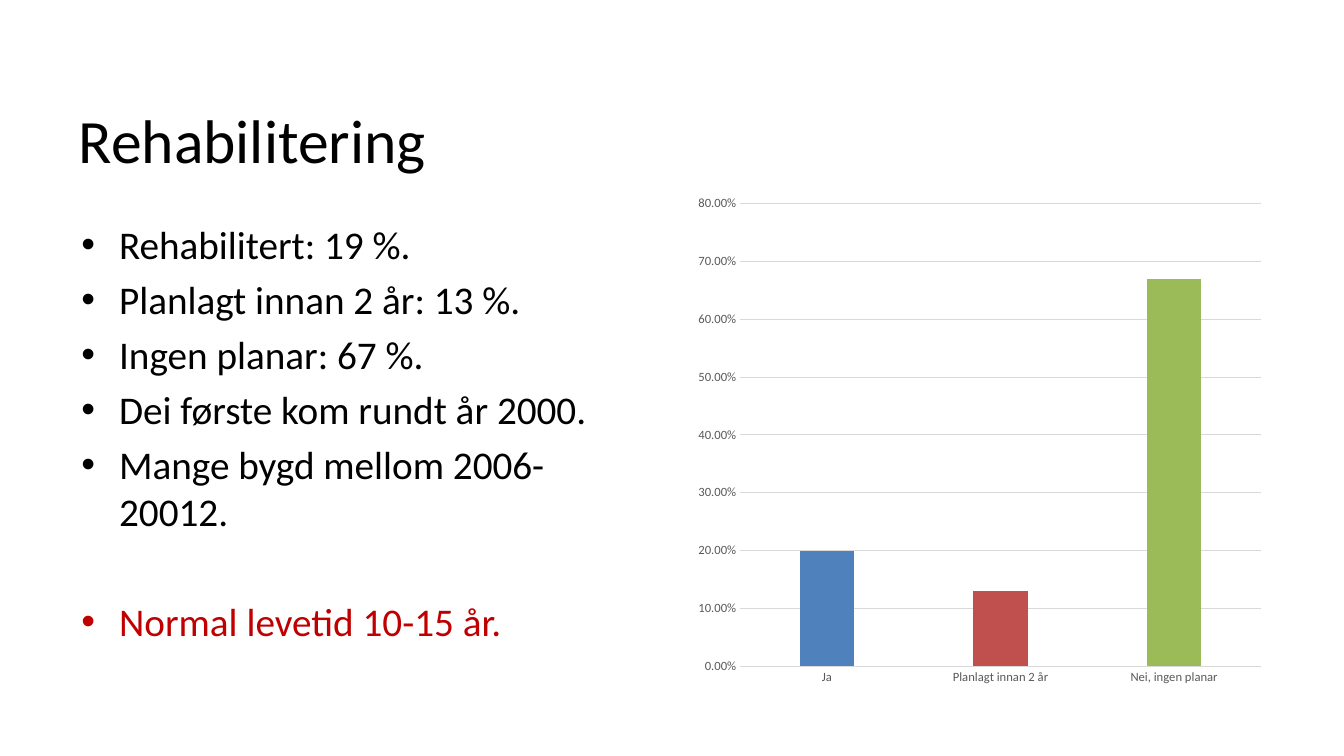
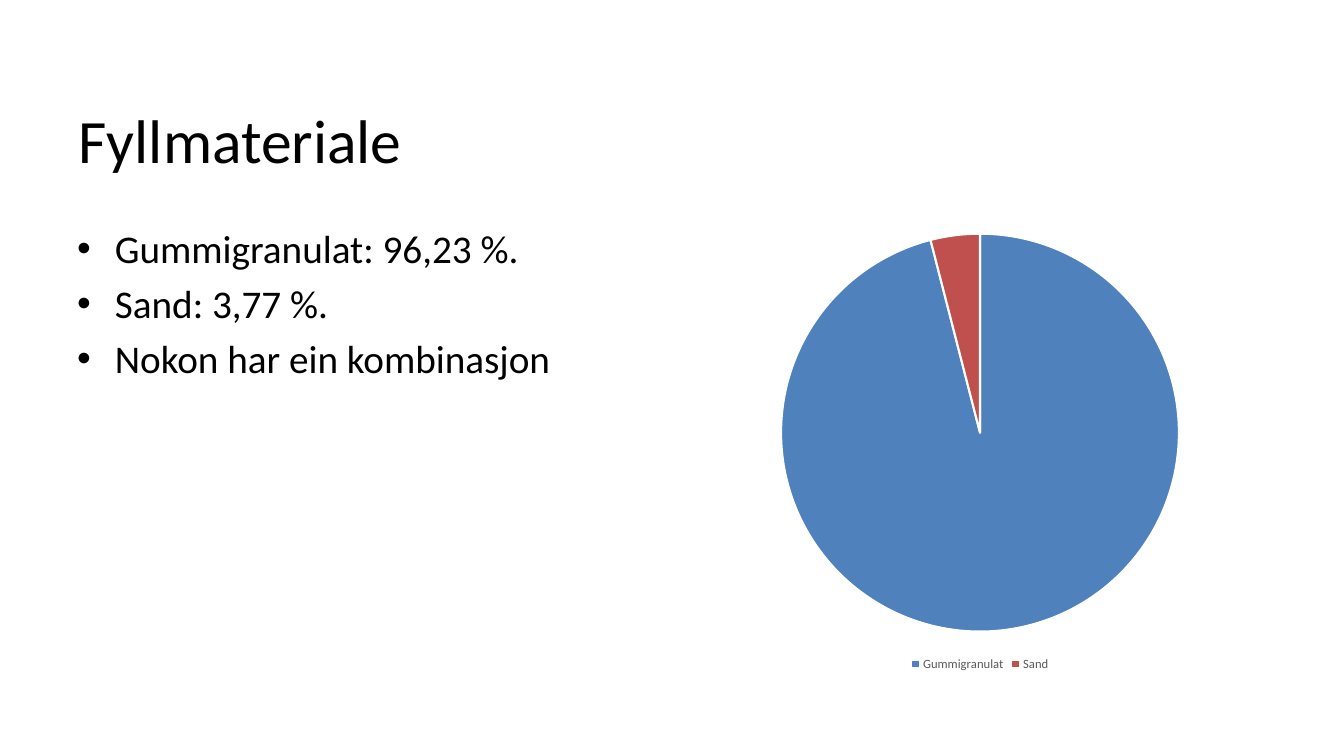
from pptx import Presentation
from pptx import util as u
from pptx.chart.data import CategoryChartData
from pptx.dml.color import RGBColor
from pptx.enum import chart as ch, text
from pptx.oxml.ns import qn
from lxml import etree

Pt = u.Pt
FONT = "Calibri"
BLACK, RED, WHITE = "000000", "C00000", "FFFFFF"
LABEL, RULE = "595959", "D9D9D9"
ACCENTS = ["4F81BD", "C0504D", "9BBB59"]
INDENT = 27


def rgb(hex_code):
    return RGBColor.from_string(hex_code)


def set_font(font, size, color):
    font.name = FONT
    font.size = Pt(size)
    font.color.rgb = rgb(color)


def write(paragraph, words, size=28, color=BLACK, before=0, bullet=False):
    paragraph.alignment = text.PP_ALIGN.LEFT
    paragraph.space_before = Pt(before)
    if bullet:
        props = paragraph._p.get_or_add_pPr()
        props.set("marL", str(Pt(INDENT)))
        props.set("indent", str(-Pt(INDENT)))
        etree.SubElement(props, qn("a:buFont"), typeface="Arial")
        etree.SubElement(props, qn("a:buChar"), char="•")
    run = paragraph.add_run()
    run.text = words
    set_font(run.font, size, color)


def add_titled_slide(prs, heading):
    slide = prs.slides.add_slide(prs.slide_layouts[5])
    title = slide.shapes.title
    title.left, title.top, title.width, title.height = map(Pt, (49, 54.5, 864, 90))
    title.text_frame.vertical_anchor = text.MSO_ANCHOR.MIDDLE
    write(title.text_frame.paragraphs[0], heading, size=44)
    return slide


def add_bullets(slide, box, points):
    frame = slide.shapes.add_textbox(*map(Pt, box)).text_frame
    frame.word_wrap = True
    for number, (words, style) in enumerate(points):
        paragraph = frame.add_paragraph() if number else frame.paragraphs[0]
        spacing = {"before": 5.6 if number else 0, **style}
        write(paragraph, words, bullet=True, **spacing)


def add_share_chart(slide, kind, box, shares, number_format="General"):
    data = CategoryChartData(number_format=number_format)
    data.categories = list(shares)
    data.add_series("Series 1", list(shares.values()))
    chart = slide.shapes.add_chart(kind, *map(Pt, box), data).chart
    chart.has_title = False
    chart.has_legend = False
    set_font(chart.font, 10, BLACK)
    series = chart.plots[0].series[0]
    for index, color in zip(range(len(shares)), ACCENTS):
        fill = series.points[index].format.fill
        fill.solid()
        fill.fore_color.rgb = rgb(color)
    return chart


def style_line(line, color, width=0.75):
    line.color.rgb = rgb(color)
    line.width = Pt(width)


def format_columns(chart):
    chart.plots[0].gap_width = 219
    chart.plots[0].overlap = -27
    for axis in (chart.category_axis, chart.value_axis):
        axis.major_tick_mark = ch.XL_TICK_MARK.NONE
        axis.minor_tick_mark = ch.XL_TICK_MARK.NONE
        set_font(axis.tick_labels.font, 9, LABEL)
    style_line(chart.category_axis.format.line, RULE)
    values = chart.value_axis
    values.minimum_scale, values.maximum_scale, values.major_unit = 0, 0.8, 0.1
    values.tick_labels.number_format = "0.00%"
    values.tick_labels.number_format_is_linked = False
    values.format.line.fill.background()
    style_line(values.major_gridlines.format.line, RULE)


def format_pie(chart, slices):
    for index in range(slices):
        style_line(chart.plots[0].series[0].points[index].format.line, WHITE, 1.5)
    chart.has_legend = True
    chart.legend.position = ch.XL_LEGEND_POSITION.BOTTOM
    chart.legend.include_in_layout = False
    set_font(chart.legend.font, 9, LABEL)


def build_rehabilitation(prs):
    slide = add_titled_slide(prs, "Rehabilitering")
    shares = {"Ja": 0.2, "Planlagt innan 2 år": 0.13, "Nei, ingen planar": 0.67}
    chart = add_share_chart(slide, ch.XL_CHART_TYPE.COLUMN_CLUSTERED,
                            (490.5, 133, 418.5, 363.5), shares, "0.00%")
    format_columns(chart)
    add_bullets(slide, (51, 154, 408, 343), [
        ("Rehabilitert: 19 %.", {}),
        ("Planlagt innan 2 år: 13 %.", {}),
        ("Ingen planar: 67 %.", {}),
        ("Dei første kom rundt år 2000.", {}),
        ("Mange bygd mellom 2006-20012.", {}),
        ("Normal levetid 10-15 år.", {"color": RED, "before": 45}),
    ])


def build_infill(prs):
    slide = add_titled_slide(prs, "Fyllmateriale")
    add_bullets(slide, (48, 157, 424, 325.5), [
        ("Gummigranulat: 96,23 %.", {}),
        ("Sand: 3,77 %.", {}),
        ("Nokon har ein kombinasjon", {}),
    ])
    shares = {"Gummigranulat": 96, "Sand": 4}
    chart = add_share_chart(slide, ch.XL_CHART_TYPE.PIE, (488, 157, 424, 325.5), shares)
    format_pie(chart, len(shares))


def main():
    prs = Presentation()
    prs.slide_width, prs.slide_height = Pt(960), Pt(540)
    build_rehabilitation(prs)
    build_infill(prs)
    prs.save("out.pptx")


if __name__ == "__main__":
    main()
